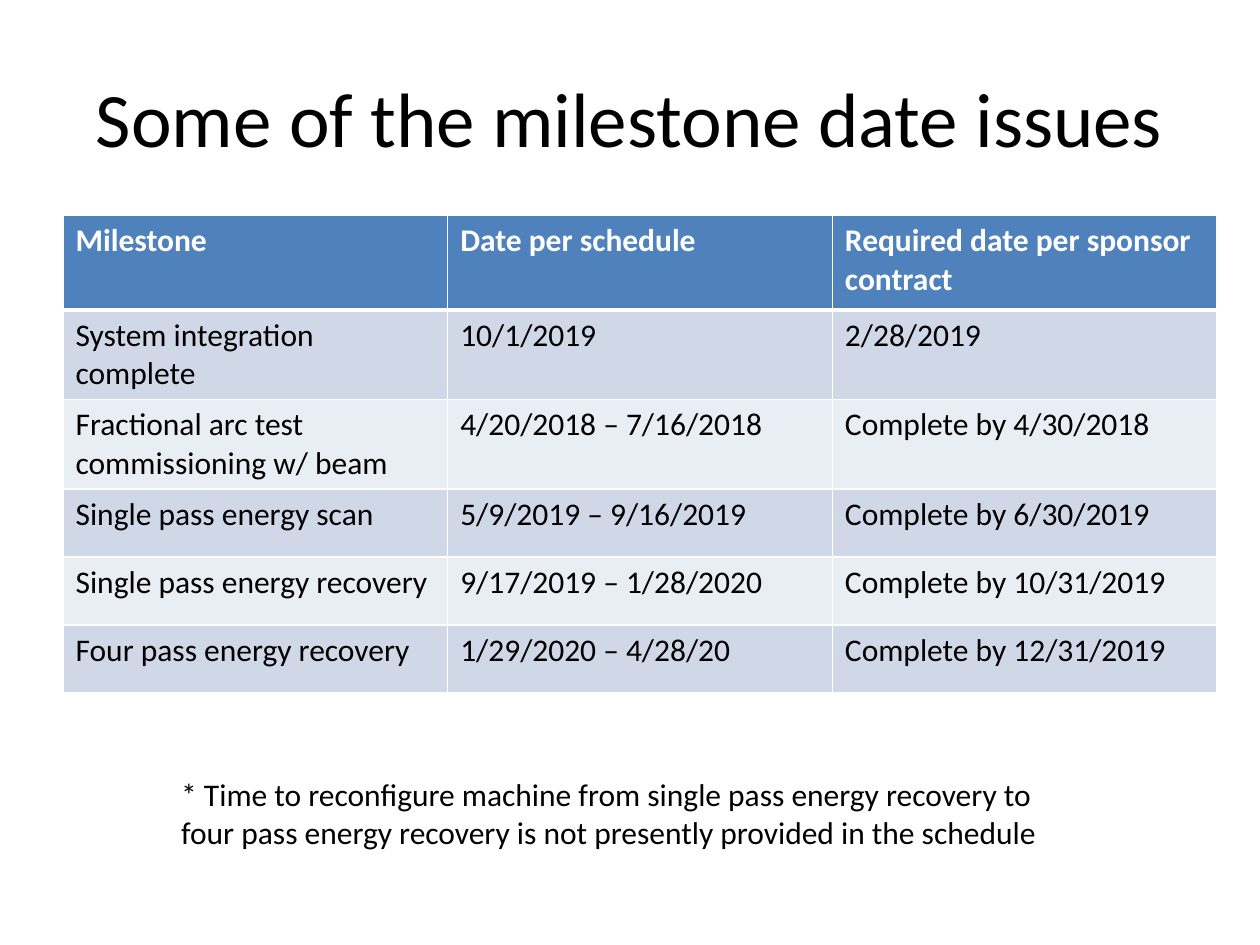
"""Build a slide comparing scheduled and contractual milestone dates."""
from lxml.etree import SubElement
from pptx import Presentation
from pptx.dml.color import RGBColor
from pptx.enum.text import MSO_ANCHOR, PP_ALIGN
from pptx.oxml.ns import qn
from pptx.util import Inches, Pt

BLACK = RGBColor(0x00, 0x00, 0x00)
WHITE = RGBColor(0xFF, 0xFF, 0xFF)
HEADER_BLUE = RGBColor(0x4F, 0x81, 0xBD)
BANDS = [RGBColor(0xE9, 0xED, 0xF4), RGBColor(0xD0, 0xD8, 0xE8)]
FONT = "Calibri"

ROWS = [
    ("Milestone", "Date per schedule", "Required date per sponsor contract"),
    ("System integration complete", "10/1/2019", "2/28/2019"),
    ("Fractional arc test commissioning w/ beam", "4/20/2018 – 7/16/2018", "Complete by 4/30/2018"),
    ("Single pass energy scan", "5/9/2019 – 9/16/2019", "Complete by 6/30/2019"),
    ("Single pass energy recovery", "9/17/2019 – 1/28/2020", "Complete by 10/31/2019"),
    ("Four pass energy recovery", "1/29/2020 – 4/28/20", "Complete by 12/31/2019"),
]
NOTE = (
    "* Time to reconfigure machine from single pass energy recovery to "
    "four pass energy recovery is not presently provided in the schedule"
)


def add_run(p, text, size, color=BLACK, bold=False):
    r = p.add_run()
    r.text = text
    r.font.name = FONT
    r.font.size = Pt(size)
    r.font.bold = bold
    r.font.color.rgb = color


def add_border(cell, side, width):
    ln = SubElement(cell._tc.get_or_add_tcPr(), qn(f"a:ln{side}"), w=str(Pt(width)))
    fill = SubElement(ln, qn("a:solidFill"))
    SubElement(fill, qn("a:srgbClr"), val=str(WHITE))


prs = Presentation()
prs.slide_width, prs.slide_height = Inches(10), Inches(7.5)
s = prs.slides.add_slide(prs.slide_layouts[5])

title = s.shapes.title
title.left, title.top = Inches(0.5), Inches(0.3)
title.width, title.height = Inches(9), Inches(1.25)
tf = title.text_frame
tf.vertical_anchor = MSO_ANCHOR.MIDDLE
p = tf.paragraphs[0]
p.alignment = PP_ALIGN.CENTER
add_run(p, "Some of the milestone date issues", 44)

table = s.shapes.add_table(
    len(ROWS), 3, Inches(0.5), Inches(1.71), Inches(9.16), Inches(3.45)
).table
for col in table.columns:
    col.width = Inches(9.16 / 3)
for i, texts in enumerate(ROWS):
    header = i == 0
    table.rows[i].height = Inches(0.75 if header else 0.54)
    for j, text in enumerate(texts):
        cell = table.cell(i, j)
        for side in "LRTB":
            thick = (i, side) in [(0, "B"), (1, "T")]
            add_border(cell, side, 3 if thick else 1)
        cell.fill.solid()
        cell.fill.fore_color.rgb = HEADER_BLUE if header else BANDS[i % 2]
        add_run(cell.text_frame.paragraphs[0], text, 18, WHITE if header else BLACK, header)

note = s.shapes.add_textbox(Inches(1.34), Inches(6.1), Inches(7.26), Inches(0.71))
tf = note.text_frame
tf.word_wrap = True
add_run(tf.paragraphs[0], NOTE, 18)

prs.save("out.pptx")
